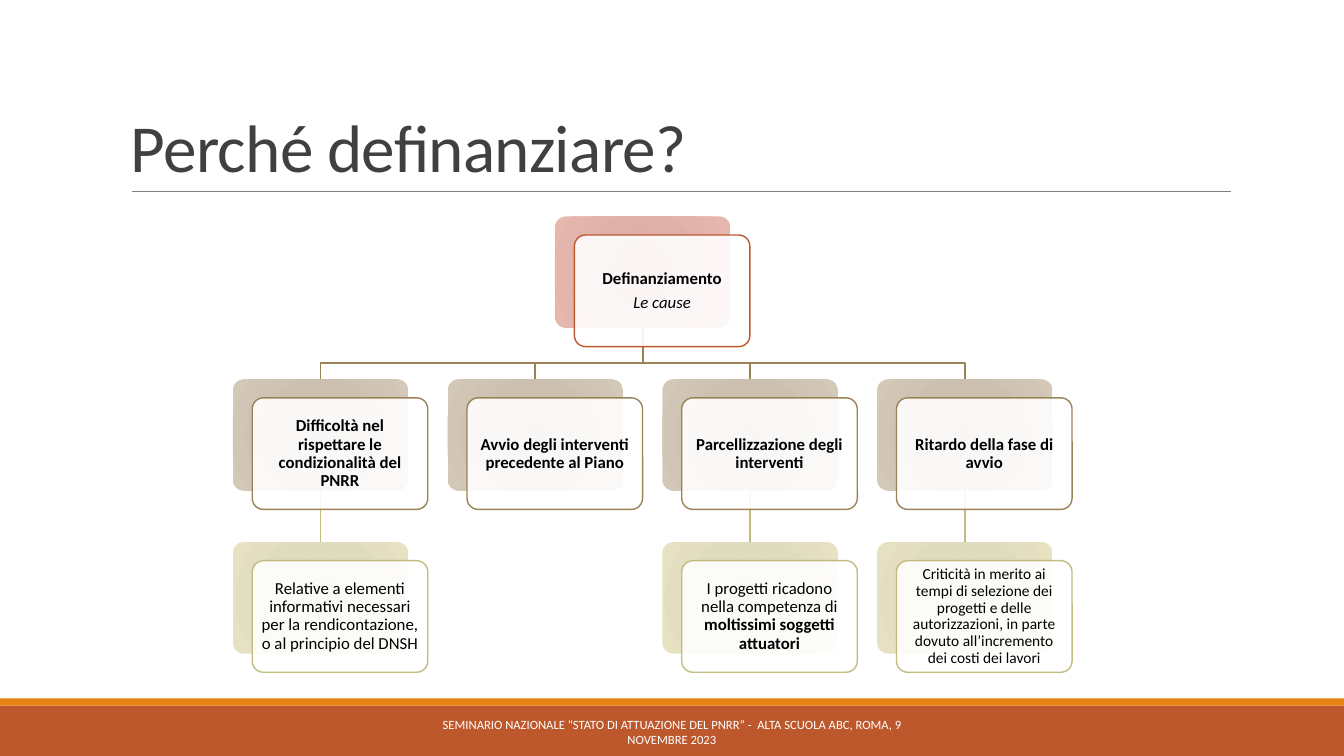
from dataclasses import dataclass

from lxml import etree
from pptx import Presentation
from pptx.dml.color import RGBColor
from pptx.enum.shapes import MSO_CONNECTOR, MSO_SHAPE
from pptx.enum.text import MSO_ANCHOR, PP_ALIGN
from pptx.oxml import parse_xml
from pptx.oxml.ns import nsdecls, qn
from pptx.util import Pt

RECTANGLE = MSO_SHAPE.RECTANGLE
ROUNDED = MSO_SHAPE.ROUNDED_RECTANGLE
STRAIGHT = MSO_CONNECTOR.STRAIGHT
MIDDLE, BOTTOM = MSO_ANCHOR.MIDDLE, MSO_ANCHOR.BOTTOM
LEFT, CENTER = PP_ALIGN.LEFT, PP_ALIGN.CENTER
SITE_TOP, SITE_BOTTOM = 0, 2


@dataclass(frozen=True)
class Theme:
    font: str = "Calibri"
    title_size: float = 48
    card_size: float = 12
    small_size: float = 11
    footer_size: float = 9
    title: str = "404040"
    text: str = "000000"
    white: str = "FFFFFF"
    rule: str = "808080"
    band: str = "BD582C"
    stripe: str = "E48312"
    # One entry per level of the chart: outline, then the shades of the back card
    outlines: tuple = ("BD582C", "9B8357", "C2BC80")
    shades: tuple = (
        ("D7A197", "DEB1A8", "E6B7AE"),
        ("C2B5A2", "CCC1B1", "D4C8B8"),
        ("D7D3AF", "DFDBBD", "E5E1C1"),
    )


PAGE_WIDTH, PAGE_HEIGHT = 960, 540
CARD_WIDTH, CARD_HEIGHT = 125.4, 79.7
CARD_LEFT, CARD_TOP = 166.3, 154.6
COLUMN_STEP, ROW_STEP = 153.4, 116.3
SHIFT_X, SHIFT_Y = 13.9, 13.3
BUS_Y = 259.1
ROOT_COLUMN = 1.5

ROOT = [[("Definanziamento", {"bold": True})], [("Le cause", {"italic": True})]]
CAUSES = [
    "Difficoltà nel rispettare le condizionalità del PNRR",
    "Avvio degli interventi precedente al Piano",
    "Parcellizzazione degli interventi",
    "Ritardo della fase di avvio",
]
DETAILS = {
    0: [("Relative a elementi informativi necessari per la rendicontazione, "
         "o al principio del DNSH", {})],
    2: [("I progetti ricadono nella competenza di ", {}),
        ("moltissimi soggetti attuatori", {"bold": True})],
    3: [("Criticità in merito ai tempi di selezione dei progetti e delle "
         "autorizzazioni, in parte dovuto all’incremento dei costi dei lavori",
         {"size": Pt(Theme.small_size)})],
}
FOOTER = ('SEMINARIO NAZIONALE "STATO DI ATTUAZIONE DEL PNRR” -  '
          "ALTA SCUOLA ABC, ROMA, 9 NOVEMBRE 2023")


def apply(target, formats):
    for name, value in formats.items():
        setattr(target, name, value)


def card_corner(column, level):
    return CARD_LEFT + column * COLUMN_STEP, CARD_TOP + level * ROW_STEP


class Painter:
    def __init__(self, page, theme):
        self.page = page
        self.theme = theme

    def line_style(self, shape, color, width):
        shape.line.color.rgb = RGBColor.from_string(color)
        shape.line.width = Pt(width)

    def box(self, kind, left, top, width, height, color):
        box = self.page.shapes.add_shape(
            kind, Pt(left), Pt(top), Pt(width), Pt(height))
        box.shadow.inherit = False
        box.fill.solid()
        box.fill.fore_color.rgb = RGBColor.from_string(color)
        box.line.fill.background()
        if kind == ROUNDED:
            box.adjustments[0] = 0.1
        return box

    def fill_text(self, shape, paragraphs, size, color, align=CENTER,
                  anchor=MIDDLE, inset=None, **spacing):
        """Fill a shape with paragraphs, each a list of (text, font formats)."""
        frame = shape.text_frame
        apply(frame, {"word_wrap": True, "vertical_anchor": anchor})
        if inset is not None:
            sides = ("left", "top", "right", "bottom")
            apply(frame, {f"margin_{side}": Pt(inset) for side in sides})
        for index, spans in enumerate(paragraphs):
            para = frame.add_paragraph() if index else frame.paragraphs[0]
            apply(para, {"alignment": align, **spacing})
            for text, formats in spans:
                span = para.add_run()
                span.text = text
                apply(span.font, {"name": self.theme.font, "size": Pt(size), **formats})
                span.font.color.rgb = RGBColor.from_string(color)

    def text(self, left, top, width, height, content, size, color, **options):
        box = self.page.shapes.add_textbox(Pt(left), Pt(top), Pt(width), Pt(height))
        self.fill_text(box, [[(content, {})]], size, color, **options)
        return box

    def back_card(self, column, level):
        shades = self.theme.shades[level]
        card = self.box(ROUNDED, *card_corner(column, level),
                        CARD_WIDTH, CARD_HEIGHT, shades[0])
        stops = "".join(
            f'<a:gs pos="{place * 1000}"><a:srgbClr val="{shade}"/></a:gs>'
            for place, shade in zip((0, 45, 100), shades))
        gradient = parse_xml(
            f'<a:gradFill {nsdecls("a")} rotWithShape="1"><a:gsLst>{stops}</a:gsLst>'
            '<a:path path="circle"><a:fillToRect l="100000" t="100000" '
            'r="100000" b="100000"/></a:path></a:gradFill>')
        properties = card._element.spPr
        properties.replace(properties.find(qn("a:solidFill")), gradient)
        return card

    def front_card(self, column, level, paragraphs):
        left, top = card_corner(column, level)
        card = self.box(ROUNDED, left + SHIFT_X, top + SHIFT_Y,
                        CARD_WIDTH, CARD_HEIGHT, self.theme.white)
        tint = card._element.spPr.find(qn("a:solidFill"))[0]
        etree.SubElement(tint, qn("a:alpha"), val="90000")
        self.line_style(card, self.theme.outlines[level], 1)
        self.fill_text(card, paragraphs, self.theme.card_size, self.theme.text,
                       inset=3.6, line_spacing=0.9, space_after=Pt(4.2))

    def straight(self, color, width, start=(0, 0), end=(0, 0)):
        line = self.page.shapes.add_connector(STRAIGHT, *map(Pt, start + end))
        self.line_style(line, color, width)
        etree.SubElement(line._element.spPr, qn("a:effectLst"))
        return line

    def branch(self, column):
        """Bent line from the root card down to a cause card."""
        root_left, root_top = card_corner(ROOT_COLUMN, 0)
        left, top = card_corner(column, 1)
        root_x, cause_x = root_left + CARD_WIDTH / 2, left + CARD_WIDTH / 2
        points = [(root_x, BUS_Y), (cause_x, BUS_Y), (cause_x, top)]
        builder = self.page.shapes.build_freeform(
            Pt(root_x), Pt(root_top + CARD_HEIGHT))
        builder.add_line_segments([(Pt(x), Pt(y)) for x, y in points], close=False)
        bend = builder.convert_to_shape()
        bend.shadow.inherit = False
        bend.fill.background()
        self.line_style(bend, self.theme.outlines[1], 1.25)


def draw_frame(painter):
    theme = painter.theme
    painter.box(RECTANGLE, 0, 504, PAGE_WIDTH, 36, theme.band)
    painter.box(RECTANGLE, 0, 498.8, PAGE_WIDTH, 5.2, theme.stripe)
    painter.straight(theme.rule, 0.5, (94.3, 136.8), (879.1, 136.8))
    title = painter.text(86.4, 22.6, 792, 114.2, "Perché definanziare?",
                         theme.title_size, theme.title, align=LEFT,
                         anchor=BOTTOM, line_spacing=0.85)
    title.text_frame.paragraphs[0].runs[0]._r.get_or_add_rPr().set("spc", "-50")
    painter.text(290, 508.6, 379.7, 28.8, FOOTER, theme.footer_size, theme.white)


def draw_causes(painter):
    painter.back_card(ROOT_COLUMN, 0)
    causes = [painter.back_card(column, 1) for column in range(len(CAUSES))]
    details = {column: painter.back_card(column, 2) for column in DETAILS}
    for column, detail in details.items():
        link = painter.straight(painter.theme.outlines[2], 1.25)
        link.begin_connect(causes[column], SITE_BOTTOM)
        link.end_connect(detail, SITE_TOP)
    for column in range(len(CAUSES)):
        painter.branch(column)
    painter.front_card(ROOT_COLUMN, 0, ROOT)
    for column, cause in enumerate(CAUSES):
        painter.front_card(column, 1, [[(cause, {"bold": True})]])
    for column, spans in DETAILS.items():
        painter.front_card(column, 2, [spans])


def main():
    deck = Presentation()
    apply(deck, {"slide_width": Pt(PAGE_WIDTH), "slide_height": Pt(PAGE_HEIGHT)})
    page = deck.slides.add_slide(deck.slide_layouts[6])
    painter = Painter(page, Theme())
    draw_frame(painter)
    draw_causes(painter)
    deck.save("out.pptx")


if __name__ == "__main__":
    main()
